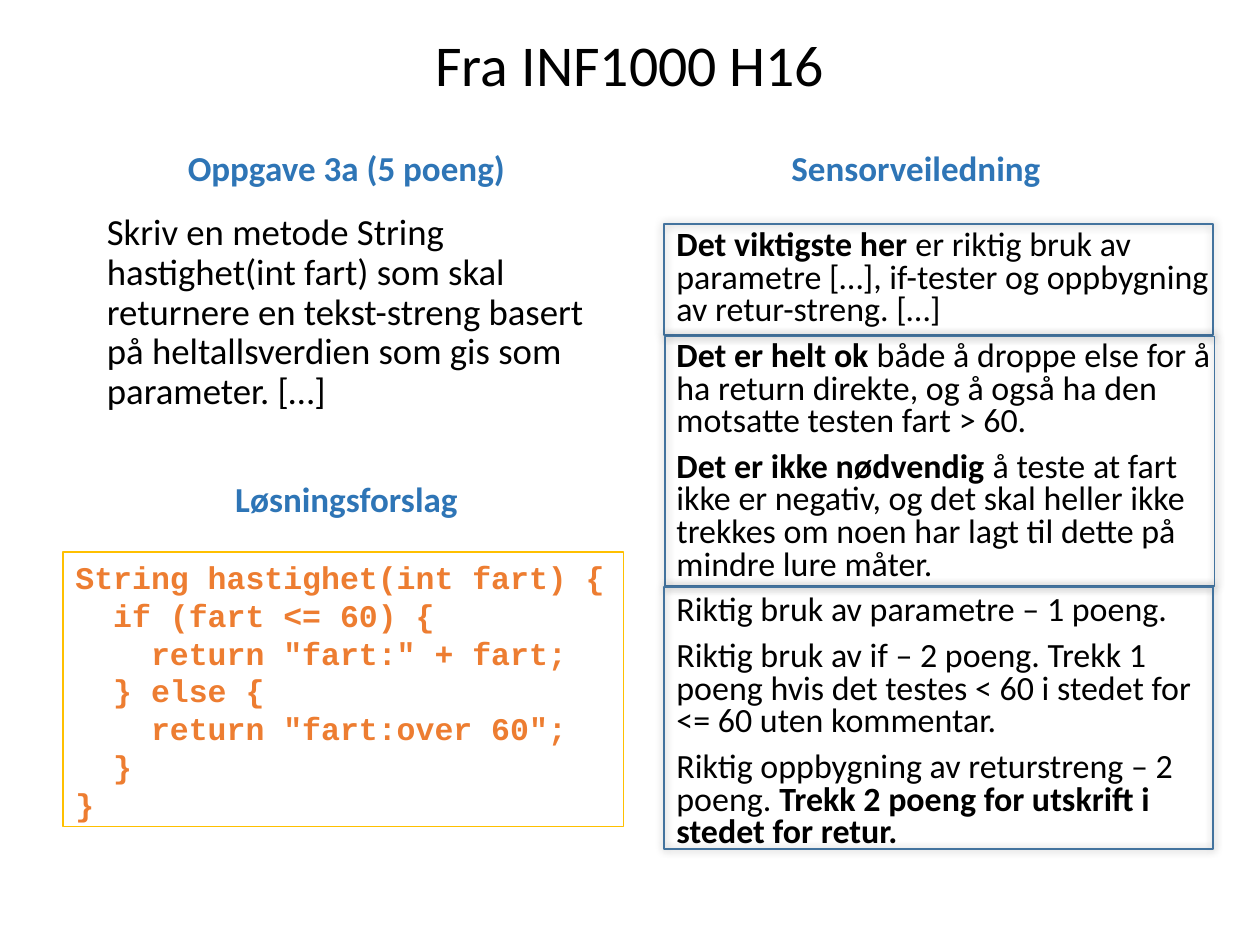
from lxml import etree
from pptx import Presentation
from pptx.dml.color import RGBColor
from pptx.enum import shapes, text
from pptx.oxml.ns import qn
from pptx.util import Inches, Pt

BLUE = "2E75B6"
TASK = ("Skriv en metode\u00a0String hastighet(int fart)\u00a0som skal returnere\u00a0en "
        "tekst-streng basert på heltallsverdien som gis som parameter. […]")
CODE = """String hastighet(int fart) {
  if (fart <= 60) {
    return "fart:" + fart;
  } else {
    return "fart:over 60";
  }
}"""
GUIDE = [
    [("Det viktigste her ", True),
     ("er riktig bruk av parametre […], if-tester og oppbygning av retur-streng. […]", False)],
    [("Det er helt ok ", True),
     ("både å droppe else for å ha return direkte, og å også ha den motsatte testen fart > 60.", False)],
    [("Det er ikke nødvendig ", True),
     ("å teste at fart ikke er negativ, og det skal heller ikke trekkes om noen har lagt til "
      "dette på mindre lure måter.", False)],
    [("Riktig bruk av parametre – 1 poeng.", False)],
    [("Riktig bruk av if – 2 poeng. Trekk 1 poeng hvis det testes < 60 i stedet for <= 60 "
      "uten kommentar.", False)],
    [("Riktig oppbygning av returstreng – 2 poeng. ", False),
     ("Trekk 2 poeng for utskrift i stedet for retur.", True)],
]
HEADS = [
    ("Oppgave 3a (5 poeng)", 0.75, 0.85, "BOTTOM", 7.5),
    ("Sensorveiledning", 5.27, 0.85, "BOTTOM", 7.5),
    ("Løsningsforslag", 0.75, 3.63, "MIDDLE", 12),
]
FRAMES = [(5.27, 1.78, 0.88), (5.28, 2.67, 1.98), (5.27, 4.66, 2.08)]


def color(code):
    return RGBColor.from_string(code)


def write(shape, paras, size, font="Calibri", ink="000000", align="LEFT",
          anchor="TOP", lead=None, before=None):
    frame = shape.text_frame
    frame.word_wrap = True
    frame.vertical_anchor = getattr(text.MSO_ANCHOR, anchor)
    for i, runs in enumerate(paras):
        para = frame.add_paragraph() if i else frame.paragraphs[0]
        para.alignment = getattr(text.PP_ALIGN, align)
        para.line_spacing = lead
        para.space_before = None if before is None else Pt(before)
        for words, bold in runs:
            run = para.add_run()
            run.text = words
            run.font.name = font
            run.font.size = Pt(size)
            run.font.bold = bold
            run.font.color.rgb = color(ink)


def label(slide, box, paras, size, **style):
    shape = slide.shapes.add_textbox(*map(Inches, box))
    write(shape, paras, size, **style)


def panel(slide, box, line, width, fill=None):
    shape = slide.shapes.add_shape(shapes.MSO_SHAPE.RECTANGLE, *map(Inches, box))
    shape.shadow.inherit = False
    shape.line.color.rgb = color(line)
    shape.line.width = Pt(width)
    if fill:
        shape.fill.solid()
        shape.fill.fore_color.rgb = color(fill)
    else:
        shape.fill.background()
    return shape


def glow(shape):
    effects = shape._element.spPr.find(qn("a:effectLst"))
    shade = etree.SubElement(effects, qn("a:outerShdw"), blurRad=str(Pt(5)), dist="0", dir="0")
    tint = etree.SubElement(shade, qn("a:srgbClr"), val="000000")
    etree.SubElement(tint, qn("a:alpha"), val="40000")


def main():
    deck = Presentation()
    deck.slide_width, deck.slide_height = Inches(10), Inches(7.5)
    slide = deck.slides.add_slide(deck.slide_layouts[6])

    label(slide, (0.75, 0, 8.5, 1.07), [[("Fra INF1000 H16", False)]], 33,
          align="CENTER", anchor="MIDDLE", lead=0.9)
    label(slide, (0.75, 1.65, 4, 3.6), [[(TASK, False)]], 21, lead=0.9, before=7.5)
    label(slide, (5.27, 1.78, 4.52, 5.45), GUIDE, 19.4, lead=0.8, before=7.5)

    code = panel(slide, (0.5, 4.38, 4.45, 2.18), "FFC000", 0.75, "FFFFFF")
    write(code, [[(row, True)] for row in CODE.split("\n")], 18,
          font="Courier New", ink="ED7D31")

    for words, left, top, anchor, before in HEADS:
        label(slide, (left, top, 4, 0.7), [[(words, True)]], 20, ink=BLUE,
              align="CENTER", anchor=anchor, lead=0.9, before=before)
    for left, top, height in FRAMES:
        glow(panel(slide, (left, top, 4.36, height), "43739E", 1))

    deck.save("out.pptx")


if __name__ == "__main__":
    main()
